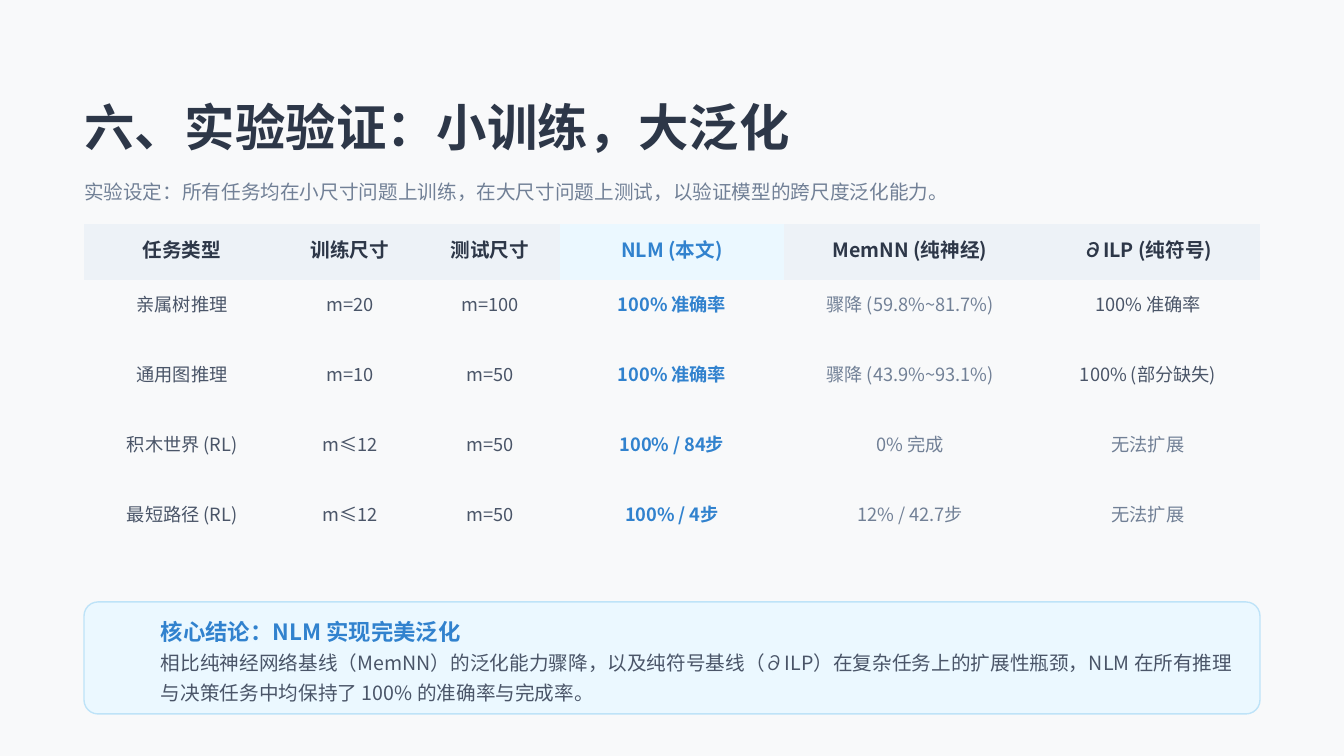
from lxml import etree
from pptx import Presentation
from pptx.dml.color import RGBColor
from pptx.enum.shapes import MSO_SHAPE
from pptx.enum.text import MSO_ANCHOR, MSO_AUTO_SIZE, PP_ALIGN
from pptx.oxml.ns import qn
from pptx.util import Emu, Pt

ROUND = MSO_SHAPE.ROUNDED_RECTANGLE
MIDDLE = MSO_ANCHOR.MIDDLE
FIXED = MSO_AUTO_SIZE.NONE
LEFT, CENTER = PP_ALIGN.LEFT, PP_ALIGN.CENTER

SCALE = 914400 / 100.8
FONT = "Noto Sans CJK SC"
PLAIN = "{2D5ABB26-0587-4C30-8999-92F81FD0307C}"
INK, TEXT, GRAY, BLUE = "2D3748", "4A5568", "718096", "3182CE"
PAGE, HEAD, PALE, EDGE = "F8F9FA", "EDF2F7", "EBF8FF", "BEE3F8"
X, W = 84, 1176
BEST = 3
COLS = [196, 140, 140, 224, 252, 224]
ROWS = [56, 70, 70, 70, 70]
DATA = [
    ["任务类型", "训练尺寸", "测试尺寸", "NLM (本文)", "MemNN (纯神经)", "∂ILP (纯符号)"],
    ["亲属树推理", "m=20", "m=100", "100% 准确率", "骤降 (59.8%~81.7%)", "100% 准确率"],
    ["通用图推理", "m=10", "m=50", "100% 准确率", "骤降 (43.9%~93.1%)", "100% (部分缺失)"],
    ["积木世界 (RL)", "m≤12", "m=50", "100% / 84步", "0% 完成", "无法扩展"],
    ["最短路径 (RL)", "m≤12", "m=50", "100% / 4步", "12% / 42.7步", "无法扩展"],
]


def px(n):
    return Emu(round(n * SCALE))


def rgb(code):
    return RGBColor.from_string(code)


def paint(fill, code):
    fill.solid()
    fill.fore_color.rgb = rgb(code)


def style(para, size, code, bold=False, align=LEFT, space=None):
    para.alignment = align
    para.line_spacing = space
    for run in para.runs:
        font = run.font
        font.size, font.bold, font.name = Pt(size), bold, FONT
        font.color.rgb = rgb(code)
        etree.SubElement(font._element, qn("a:ea"), typeface=FONT)


def fill_text(shape, lines):
    frame = shape.text_frame
    frame.word_wrap = True
    frame.auto_size = FIXED
    frame.vertical_anchor = MIDDLE
    frame.margin_left = frame.margin_right = 0
    frame.margin_top = frame.margin_bottom = 0
    frame.text = "\n".join(line[0] for line in lines)
    for para, (_, size, code, bold) in zip(frame.paragraphs, lines):
        style(para, size, code, bold, space=1.25)


def add_title(slide, text, x, y, w, h):
    title = slide.shapes.title
    title.left, title.top, title.width, title.height = map(px, (x, y, w, h))
    fill_text(title, [(text, 36, INK, True)])


def add_text(slide, lines, x, y, w, h):
    box = slide.shapes.add_textbox(*map(px, (x, y, w, h)))
    fill_text(box, lines)


def add_card(slide, x, y, w, h):
    card = slide.shapes.add_shape(ROUND, *map(px, (x, y, w, h)))
    card.adjustments[0] = 0.125
    card.shadow.inherit = False
    paint(card.fill, PALE)
    card.line.color.rgb = rgb(EDGE)
    card.line.width = Pt(1)


def cell_code(row, col, text):
    if col == BEST:
        return BLUE
    if row == 0:
        return INK
    return GRAY if col == BEST + 1 or text == "无法扩展" else TEXT


def add_grid(slide, x, y):
    size = map(px, (x, y, sum(COLS), sum(ROWS)))
    grid = slide.shapes.add_table(len(ROWS), len(COLS), *size).table
    grid.first_row = grid.horz_banding = False
    grid._tbl.tblPr.find(qn("a:tableStyleId")).text = PLAIN
    for col, w in zip(grid.columns, COLS):
        col.width = px(w)
    for r, h in enumerate(ROWS):
        grid.rows[r].height = px(h)
        for c, text in enumerate(DATA[r]):
            cell = grid.cell(r, c)
            cell.margin_left = cell.margin_right = px(11)
            cell.margin_top = cell.margin_bottom = px(11)
            if r == 0:
                paint(cell.fill, PALE if c == BEST else HEAD)
            else:
                cell.fill.background()
            cell.text_frame.text = text
            style(cell.text_frame.paragraphs[0], 13 if r else 14,
                  cell_code(r, c, text), r == 0 or c == BEST, CENTER)


def main():
    deck = Presentation()
    deck.slide_width, deck.slide_height = px(1344), px(756)
    slide = deck.slides.add_slide(deck.slide_layouts[5])
    paint(slide.background.fill, PAGE)
    add_title(slide, "六、实验验证：小训练，大泛化", X, 84, W, 70)
    add_text(slide, [
        ("实验设定：所有任务均在小尺寸问题上训练，在大尺寸问题上测试，以验证模型的跨尺度泛化能力。",
         14, GRAY, False),
    ], X, 168, W, 42)
    add_grid(slide, X, 224)
    add_card(slide, X, 602, W, 112)
    add_text(slide, [
        ("核心结论：NLM 实现完美泛化", 16, BLUE, True),
        ("相比纯神经网络基线（MemNN）的泛化能力骤降，以及纯符号基线（∂ILP）在复杂任务上的扩展性瓶颈，"
         "NLM 在所有推理与决策任务中均保持了 100% 的准确率与完成率。", 14, TEXT, False),
    ], 161, 616, 1078, 84)
    deck.save("out.pptx")


if __name__ == "__main__":
    main()
